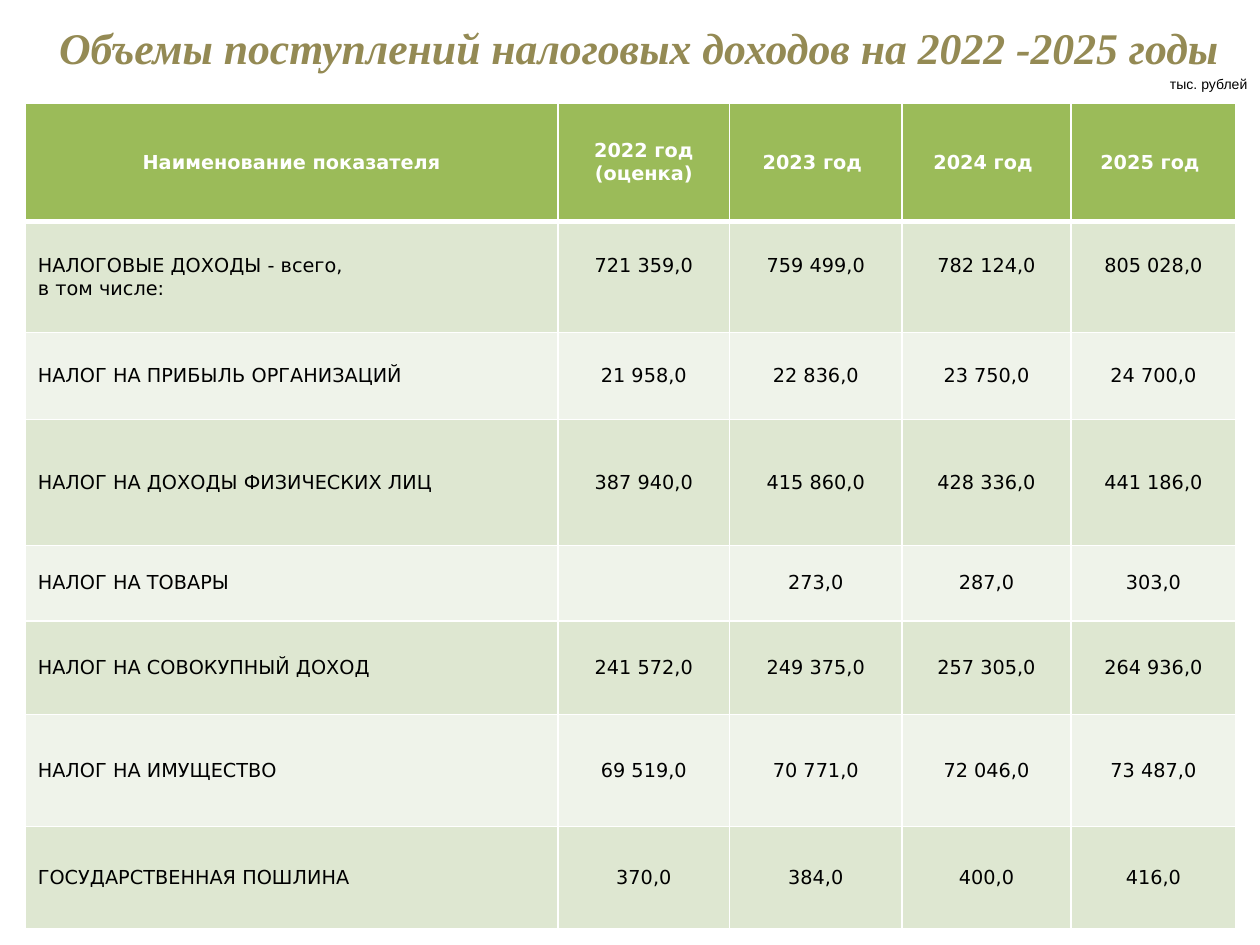
from dataclasses import dataclass

from lxml.etree import SubElement
from pptx import Presentation
from pptx.dml.color import RGBColor
from pptx.enum.text import MSO_ANCHOR, MSO_AUTO_SIZE, PP_ALIGN
from pptx.oxml.ns import qn
from pptx.util import Inches, Pt

TITLE = "Объемы поступлений налоговых доходов на 2022 -2025 годы"
UNITS = "тыс. рублей"
HEADER = ("Наименование показателя", "2022 год (оценка)", "2023 год ", "2024 год ", "2025 год ")
TAXES = [
    ("НАЛОГОВЫЕ ДОХОДЫ - всего,\nв том числе:", "721 359,0", "759 499,0", "782 124,0", "805 028,0"),
    ("НАЛОГ НА ПРИБЫЛЬ ОРГАНИЗАЦИЙ", "21 958,0", "22 836,0", "23 750,0", "24 700,0"),
    ("НАЛОГ НА ДОХОДЫ ФИЗИЧЕСКИХ ЛИЦ", "387 940,0", "415 860,0", "428 336,0", "441 186,0"),
    ("НАЛОГ НА ТОВАРЫ", "", "273,0", "287,0", "303,0"),
    ("НАЛОГ НА СОВОКУПНЫЙ ДОХОД", "241 572,0", "249 375,0", "257 305,0", "264 936,0"),
    ("НАЛОГ НА ИМУЩЕСТВО", "69 519,0", "70 771,0", "72 046,0", "73 487,0"),
    ("ГОСУДАРСТВЕННАЯ ПОШЛИНА", "370,0", "384,0", "400,0", "416,0"),
]
COLUMN_WIDTHS = (4.23, 1.36, 1.37, 1.34, 1.31)
ROW_HEIGHTS = (0.94, 0.88, 0.69, 1, 0.6, 0.74, 0.89, 0.81)
TOTAL_ROW = 1


@dataclass(frozen=True)
class Theme:
    title: tuple = ("Times New Roman", 25, "948A54")
    units: tuple = ("Arial", 8, "000000")
    header: tuple = ("DejaVu Sans", 11, "FFFFFF")
    body: tuple = ("DejaVu Sans", 11, "000000")
    header_fill: str = "9BBB59"
    bands: tuple = ("EFF3EA", "DEE7D1")
    border: str = "FFFFFF"
    line_height: float = 0.18


THEME = Theme()


def write(paragraph, text, style, align, bold=False, italic=False):
    paragraph.alignment = align
    run = paragraph.add_run()
    run.text = text
    font = run.font
    font.name, size, color = style
    font.size = Pt(size)
    font.color.rgb = RGBColor.from_string(color)
    font.bold, font.italic = bold, italic


def add_borders(cell, top, bottom):
    """Draw the four cell borders; they must precede the cell's fill in the XML."""
    properties = cell._tc.get_or_add_tcPr()
    for side, width in (("L", 1), ("R", 1), ("T", top), ("B", bottom)):
        line = SubElement(properties, qn(f"a:ln{side}"), w=str(Pt(width)))
        fill = SubElement(line, qn("a:solidFill"))
        SubElement(fill, qn("a:srgbClr"), val=THEME.border)


def add_title(slide):
    title = slide.shapes.title
    title.left, title.top = Inches(-0.91), Inches(-0.01)
    title.width, title.height = Inches(11.18), Inches(0.76)
    frame = title.text_frame
    frame.word_wrap = True
    frame.auto_size = MSO_AUTO_SIZE.NONE
    frame.vertical_anchor = MSO_ANCHOR.MIDDLE
    paragraph = frame.paragraphs[0]
    write(paragraph, TITLE, THEME.title, PP_ALIGN.CENTER, bold=True, italic=True)
    properties = paragraph._p.get_or_add_pPr()
    properties.set("marL", str(Inches(0.78)))
    properties.set("indent", "0")


def add_units(slide):
    box = slide.shapes.add_textbox(Inches(9.17), Inches(0.55), Inches(0.83), Inches(0.24))
    frame = box.text_frame
    frame.word_wrap = False
    frame.auto_size = MSO_AUTO_SIZE.SHAPE_TO_FIT_TEXT
    write(frame.paragraphs[0], UNITS, THEME.units, PP_ALIGN.RIGHT)


def fill_cell(cell, text, row, column):
    is_header = row == 0
    add_borders(cell, top=3 if row == 1 else 1, bottom=3 if is_header else 1)
    cell.fill.solid()
    color = THEME.header_fill if is_header else THEME.bands[row % 2]
    cell.fill.fore_color.rgb = RGBColor.from_string(color)
    cell.vertical_anchor = MSO_ANCHOR.MIDDLE
    if row == TOTAL_ROW and column:
        # Level the totals with the first line of the two-line label
        cell.margin_bottom = Inches(0.05 + THEME.line_height)
    if not text:
        return
    align = PP_ALIGN.CENTER if is_header or column else PP_ALIGN.LEFT
    style = THEME.header if is_header else THEME.body
    frame = cell.text_frame
    for index, line in enumerate(text.split("\n")):
        paragraph = frame.add_paragraph() if index else frame.paragraphs[0]
        write(paragraph, line, style, align, bold=is_header)


def add_tax_table(slide):
    rows = [HEADER, *TAXES]
    table = slide.shapes.add_table(
        len(rows), len(HEADER), Inches(0.2), Inches(0.82),
        Inches(sum(COLUMN_WIDTHS)), Inches(sum(ROW_HEIGHTS)),
    ).table
    for column, width in zip(table.columns, COLUMN_WIDTHS):
        column.width = Inches(width)
    for row, height in zip(table.rows, ROW_HEIGHTS):
        row.height = Inches(height)
    for row, values in enumerate(rows):
        for column, text in enumerate(values):
            fill_cell(table.cell(row, column), text, row, column)


def main():
    presentation = Presentation()
    presentation.slide_width, presentation.slide_height = Inches(10), Inches(7.5)
    slide = presentation.slides.add_slide(presentation.slide_layouts[5])
    add_tax_table(slide)
    add_units(slide)
    add_title(slide)
    presentation.save("out.pptx")


if __name__ == "__main__":
    main()
